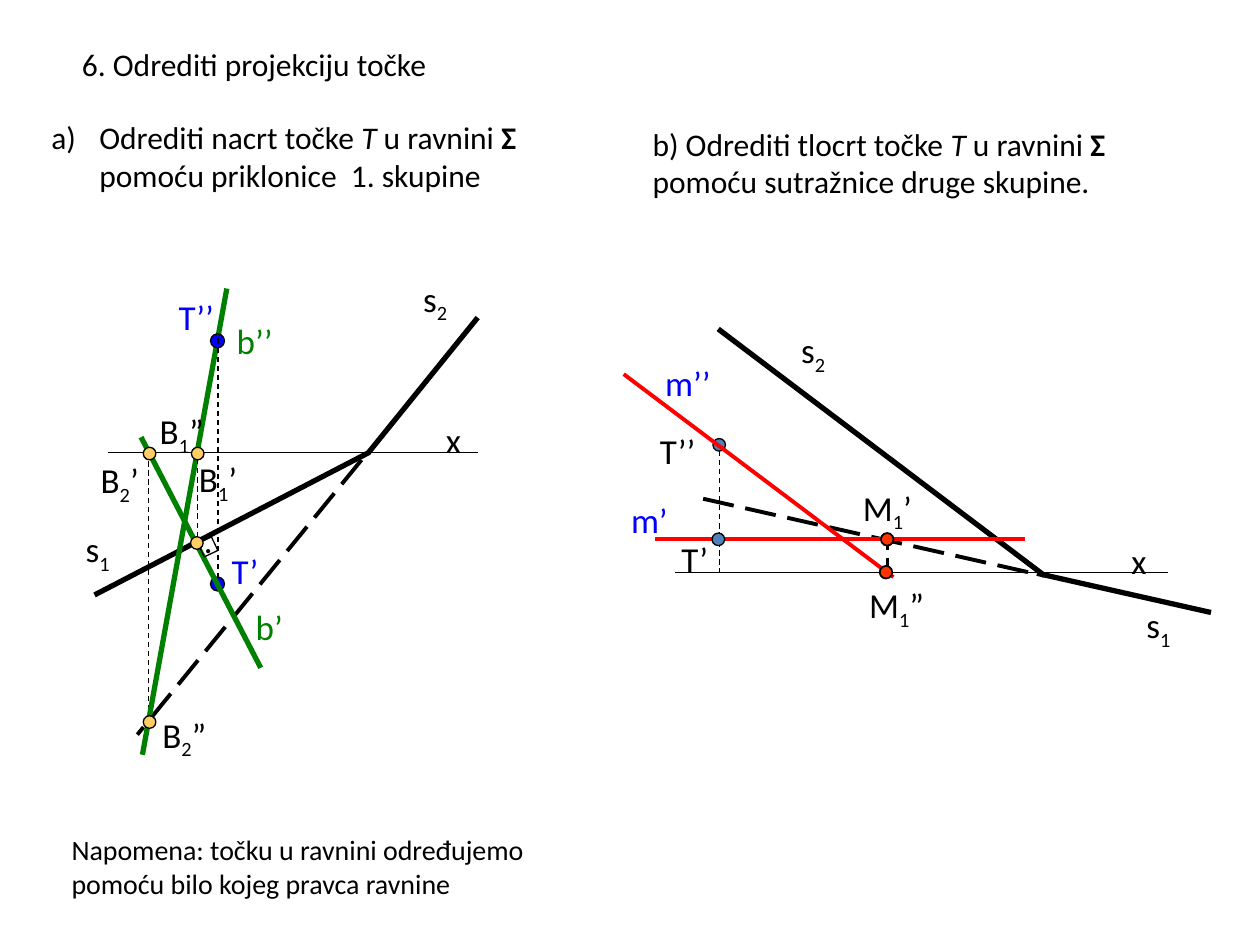
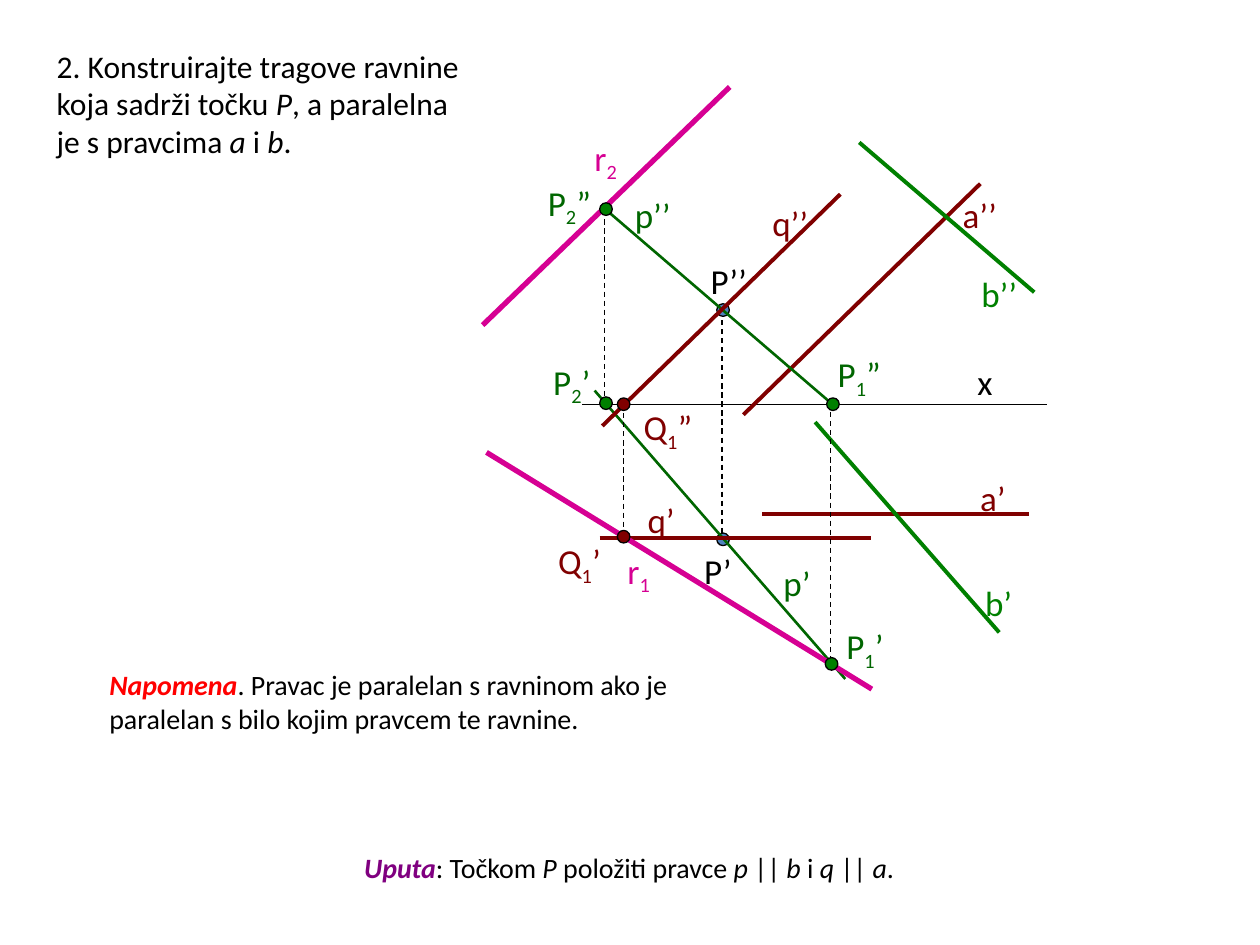
from dataclasses import dataclass
from itertools import groupby

from lxml import etree
from pptx import Presentation
from pptx import util as u
from pptx.dml import color
from pptx.enum import dml, shapes, text
from pptx.oxml import ns

Pt = u.Pt


@dataclass(frozen=True)
class Theme:
    font: str = "Calibri"
    black: str = "000000"
    blue: str = "0000FF"
    red: str = "FF0000"
    green: str = "008000"
    dark_green: str = "006600"
    maroon: str = "800000"
    magenta: str = "D60093"
    purple: str = "800080"
    steel: str = "4F81BD"
    sand: str = "FFCC66"
    orange: str = "FF3300"
    label: float = 20
    task: float = 18
    note: float = 16
    label_height: float = 31.7
    dot: float = 7.2
    thin: float = 0.75
    fine: float = 1.5
    medium: float = 2.25
    thick: float = 3


class Sketch:
    def __init__(self, theme):
        self.t = theme
        self.prs = Presentation()
        self.prs.slide_width, self.prs.slide_height = Pt(720), Pt(540)
        self.s = None

    def rgb(self, value):
        return color.RGBColor.from_string(value)

    def add_runs(self, p, parts, size):
        for content, style, shade in parts:
            r = p.add_run()
            r.text = content
            r.font.name, r.font.size = self.t.font, Pt(size)
            r.font.color.rgb = self.rgb(shade)
            r.font.bold, r.font.italic = "b" in style, "i" in style
            if "s" in style:
                r._r.get_or_add_rPr().set("baseline", "-25000")

    def plain(self, *parts):
        return [(content, style, self.t.black) for content, style in parts]

    def slide(self, parts, x, y, w, h):
        self.s = self.prs.slides.add_slide(self.prs.slide_layouts[5])
        sp = self.s.shapes.title
        sp.left, sp.top, sp.width, sp.height = Pt(x), Pt(y), Pt(w), Pt(h)
        tf = sp.text_frame
        tf.word_wrap = True
        tf.auto_size = text.MSO_AUTO_SIZE.NONE
        tf.vertical_anchor = text.MSO_ANCHOR.TOP
        p = tf.paragraphs[0]
        p.alignment = text.PP_ALIGN.LEFT
        self.add_runs(p, parts, self.t.task)

    def text(self, paragraphs, size, x, y, w, h):
        sp = self.s.shapes.add_textbox(Pt(x), Pt(y), Pt(w), Pt(h))
        tf = sp.text_frame
        tf.word_wrap = True
        tf.auto_size = text.MSO_AUTO_SIZE.SHAPE_TO_FIT_TEXT
        for i, parts in enumerate(paragraphs):
            p = tf.add_paragraph() if i else tf.paragraphs[0]
            self.add_runs(p, parts, size)
        return tf

    def lettered(self, tf, indent):
        pPr = tf.paragraphs[0]._p.get_or_add_pPr()
        pPr.set("marL", str(Pt(indent)))
        pPr.set("indent", str(-Pt(indent)))
        etree.SubElement(pPr, ns.qn("a:buAutoNum"), type="alphaLcParenR")

    def label(self, name, x, y, w, shade=None):
        parts = [("".join(run), "s" if low else "", shade or self.t.black)
                 for low, run in groupby(name, str.isdigit)]
        self.text([parts], self.t.label, x, y, w, self.t.label_height)

    def line(self, x1, y1, x2, y2, width, shade=None, dash=None):
        c = self.s.shapes.add_connector(
            shapes.MSO_CONNECTOR.STRAIGHT, Pt(x1), Pt(y1), Pt(x2), Pt(y2))
        c.line.width = Pt(width)
        c.line.color.rgb = self.rgb(shade or self.t.black)
        if dash:
            c.line.dash_style = dash
        etree.SubElement(c._element.spPr, ns.qn("a:effectLst"))

    def hidden_line(self, *ends):
        self.line(*ends, self.t.medium, dash=dml.MSO_LINE.LONG_DASH)

    def tie(self, x, y1, y2, width=None):
        self.line(x, y1, x, y2, width or self.t.thin, dash=dml.MSO_LINE.DASH)

    def outline(self, kind, x, y, size, width):
        sp = self.s.shapes.add_shape(kind, Pt(x), Pt(y), Pt(size), Pt(size))
        sp.shadow.inherit = False
        sp.line.width = Pt(width)
        sp.line.color.rgb = self.rgb(self.t.black)
        return sp

    def dot(self, x, y, shade, size=None, width=None):
        size = size or self.t.dot
        sp = self.outline(shapes.MSO_SHAPE.OVAL, x - size / 2, y - size / 2,
                          size, width or self.t.thin)
        sp.fill.solid()
        sp.fill.fore_color.rgb = self.rgb(shade)

    def right_angle(self, x, y, size, turn):
        sp = self.outline(shapes.MSO_SHAPE.RECTANGLE, x, y, size, self.t.thin)
        sp.fill.background()
        sp.rotation = turn


def trace_line_task(k):
    t = k.t
    axis_y = 258.5
    k.line(62, axis_y, 273, axis_y, t.thin)
    k.line(273, 181.5, 210.3, 259, t.thick)
    k.line(211, axis_y, 54, 340, t.thick)
    k.label("s1", 41.8, 298, 46.8)
    k.label("s2", 234.7, 154.8, 36.7)
    k.tie(85, axis_y, 415.5)
    k.hidden_line(206.6, 262.8, 78.5, 419.8)
    k.line(81.4, 431.3, 129.6, 164.9, t.thick, t.green)
    k.label("b’’", 128.2, 179.3, 47.5, t.green)
    k.dot(124.3, 333.7, t.blue, 8)
    k.label("T’", 125.3, 310.3, 54, t.blue)
    k.dot(124.3, 194.8, t.blue, 8)
    k.tie(124.5, 330.5, 191.5)
    k.label("T’’", 95, 165.6, 53.3, t.blue)
    k.line(80.6, 249.8, 149, 381.6, t.thick, t.green)
    k.label("b’", 139, 342.7, 51.8, t.green)
    k.right_angle(114.5, 308.2, 8.6, 334.5)
    k.label(".", 109.4, 293, 19.4)
    k.tie(113, 306.7, 259.2)
    for x, y in ((112.5, 310.3), (85.5, 259.2), (113, 259.2), (85.5, 412.6)):
        k.dot(x, y, t.sand)
    for name, x, y, w in (("B1’", 106.6, 257.8, 50.4), ("B2’", 50.4, 258.5, 41.8),
                          ("B1”", 84.2, 230.4, 76.3), ("B2”", 85.7, 404, 43.2),
                          ("x", 247.7, 235.4, 28)):
        k.label(name, x, y, w)


def principal_line_task(k):
    t = k.t
    axis_y, m_y = 327, 308.2
    k.line(386, axis_y, 667.4, axis_y, t.thin)
    k.line(410.4, 188, 597, 329, t.thick)
    k.line(592.6, 327.6, 692, 350, t.thick)
    k.hidden_line(401.8, 285, 590.4, 327.6)
    k.label("s1", 648, 341.3, 31)
    k.label("s2", 450.7, 184.3, 31)
    k.dot(411, 254.2, t.steel)
    k.label("T’’", 370, 242, 44.6)
    k.label("x", 639.4, 304.6, 28.8)
    k.line(356.4, 213.8, 510.5, 329.8, t.medium, t.red)
    k.label("m’’", 373, 203, 46, t.blue)
    k.line(374.4, m_y, 586, m_y, t.medium, t.red)
    k.label("m’", 353.5, 281.5, 44.6, t.blue)
    k.tie(411, 257.8, 327.6)
    k.dot(410.5, m_y, t.steel)
    k.label("T’", 382.3, 303.8, 33.8)
    k.tie(507, m_y, axis_y, t.fine)
    k.dot(507, m_y, t.orange, width=1)
    k.label("M1’", 486, 274.3, 44.6)
    k.dot(506.3, axis_y, t.orange, width=1)
    k.label("M1”", 489.6, 329.8, 48.2)


def point_projection(k):
    t = k.t
    k.slide(k.plain(("6. Odrediti projekciju točke", "")), 39.6, 22.3, 296.6, 29)
    task = k.plain(("Odrediti nacrt točke ", ""), ("T", "i"), (" u ravnini ", ""),
                   ("Σ ", "b"), ("pomoću priklonice  1. skupine", ""))
    k.lettered(k.text([task], t.task, 22.3, 64, 293, 51), 27.4)
    trace_line_task(k)
    task = k.plain(("b) Odrediti tlocrt točke ", ""), ("T", "i"), (" u ravnini ", ""),
                   ("Σ", "b"), (" pomoću sutražnice druge skupine.", ""))
    k.text([task], t.task, 365.8, 67.7, 277.2, 51)
    principal_line_task(k)
    k.text([k.plain(("Napomena: točku u ravnini određujemo", "")),
            k.plain(("pomoću bilo kojeg pravca ravnine", ""))],
           t.note, 33.8, 472.3, 278, 46)


def plane_traces(k):
    t = k.t
    k.slide(k.plain(("2. Konstruirajte tragove ravnine koja sadrži točku ", ""),
                    ("P", "i"), (", a paralelna je s pravcima ", ""), ("a", "i"),
                    (" i ", ""), ("b", "i"), (".", "")), 25.2, 23, 249.8, 72)
    axis_y, q_y = 231, 307.4
    k.line(332.6, axis_y, 598.3, axis_y, t.thin)
    k.label("x", 551.5, 202.3, 33.8)
    k.tie(412.6, 177.8, q_y)
    for y in (177.2, 308.2):
        k.dot(413.2, y, t.steel)
    for x1, y1, x2, y2, width, shade in (
            (560.2, 105, 424.8, 237, t.medium, t.maroon),
            (491, 81.4, 591, 167, t.medium, t.green),
            (435.6, 293.8, 588.2, 293.8, t.medium, t.maroon),
            (465.8, 241.2, 571, 361.4, t.medium, t.green),
            (343.4, 117.4, 476.6, 231.8, t.fine, t.dark_green),
            (339.8, 223.2, 483, 388, t.fine, t.dark_green),
            (480.2, 111, 344.2, 243.4, t.medium, t.maroon),
            (342.7, q_y, 497.5, q_y, t.medium, t.maroon),
            (417, 49.7, 275.8, 185.8, t.thick, t.magenta),
            (278, 258.5, 498.2, 393.8, t.thick, t.magenta)):
        k.line(x1, y1, x2, y2, width, shade)
    k.tie(474.5, 230.4, 378.7)
    k.tie(345.6, 120.2, 231.8)
    k.tie(356.4, axis_y, 308.2)
    for x, y in ((346.3, 230.4), (475.2, 379.4), (476, axis_y), (346.3, 119.5)):
        k.dot(x, y, t.green)
    for y in (306.7, axis_y):
        k.dot(356.4, y, t.maroon)
    for shade, labels in (
            (t.black, (("P’’", 399, 144.7, 44), ("P’", 395.3, 310.3, 41))),
            (t.green, (("b’", 555.8, 329, 36.7), ("b’’", 553.7, 152, 36.7))),
            (t.maroon, (("a’’", 543, 107.3, 41), ("a’", 553, 268.6, 38.2),
                        ("q’’", 434.2, 111.6, 36.7), ("q’", 363, 281.5, 36),
                        ("Q1’", 311.8, 304.6, 41.8), ("Q1”", 360.7, 228.2, 44))),
            (t.dark_green, (("p’", 440.6, 317.5, 38.2), ("p’’", 355.7, 107.3, 39.6),
                            ("P2”", 306, 100, 43.2), ("P2’", 309, 202.3, 58.3),
                            ("P1”", 471.6, 198, 41.8), ("P1’", 476.6, 353.5, 40.3))),
            (t.magenta, (("r2", 332.6, 74.2, 41.8), ("r1", 351.4, 310.3, 47.5)))):
        for name, x, y, w in labels:
            k.label(name, x, y, w, shade)
    k.text([[("Napomena", "bi", t.red)] + k.plain(
        (". Pravac je paralelan s ravninom ako je paralelan s bilo kojim pravcem te ravnine.", ""))],
        t.note, 55.4, 378, 337, 46)
    k.text([[("Uputa", "bi", t.purple)] + k.plain(
        (": Točkom ", ""), ("P", "i"), (" položiti pravce ", ""), ("p ", "i"), ("|| ", ""),
        ("b ", "i"), ("i", ""), (" q ", "i"), ("|| ", ""), ("a", "i"), (".", ""))],
        t.note, 201, 482.4, 327, 26.6)


def main():
    k = Sketch(Theme())
    point_projection(k)
    plane_traces(k)
    k.prs.save("out.pptx")


if __name__ == "__main__":
    main()
